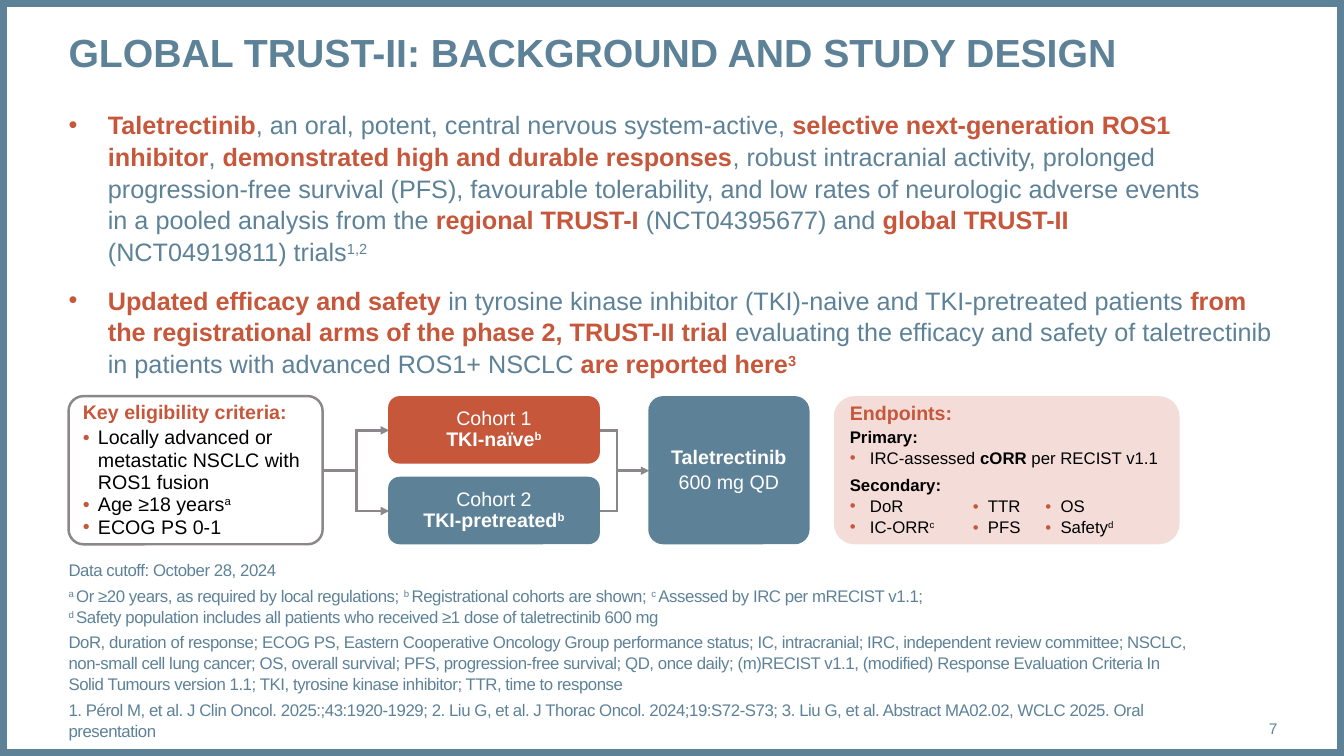
"""Build the TRUST-II background and study design slide."""
from copy import deepcopy

from lxml import etree
from pptx import Presentation
from pptx.dml.color import RGBColor
from pptx.enum import shapes, text
from pptx.oxml import ns
from pptx.util import Inches, Pt

SLATE = RGBColor(0x5D, 0x82, 0x98)
RUST = RGBColor(0xC6, 0x57, 0x3B)
BLUSH = RGBColor(0xF4, 0xDD, 0xD8)
GREY = RGBColor(0x8B, 0x87, 0x8B)
WHITE = RGBColor(0xFF, 0xFF, 0xFF)
BLACK = RGBColor(0, 0, 0)

LEFT = 0.68
DIAGRAM_TOP, DIAGRAM_HEIGHT = 3.93, 1.47
COHORT_HEIGHT, COHORT_STEP = 0.67, 0.8
UPPER, MIDDLE, LOWER = 4.27, 4.67, 5.07
SPLIT, MERGE = 3.54, 6.12

BACKGROUND = [
    [("Taletrectinib", "key"), (", an oral, potent, central nervous system-active, ", ""),
     ("selective next-generation ROS1 inhibitor", "key"), (", ", ""),
     ("demonstrated high and durable responses", "key"),
     (", robust intracranial activity, prolonged progression-free survival (PFS), favourable "
      "tolerability, and low rates of neurologic adverse events \nin a pooled analysis from the ", ""),
     ("regional TRUST-I ", "key"), ("(NCT04395677) and ", ""), ("global TRUST-II \n", "key"),
     ("(NCT04919811) trials", ""), ("1,2", "super")],
    [("Updated efficacy and safety ", "key"),
     ("in tyrosine kinase inhibitor (TKI)-naive and TKI-pretreated patients ", ""),
     ("from the registrational arms of the phase 2, TRUST-II trial ", "key"),
     ("evaluating the efficacy and safety of taletrectinib in patients with advanced ROS1+ NSCLC ", ""),
     ("are reported here", "key"), ("3", "key super")],
]
FOOTNOTES = [
    [("Data cutoff: October 28, 2024", "")],
    [("a ", "super"), ("Or ≥20 years, as required by local regulations; ", ""),
     ("b ", "super"), ("Registrational cohorts are shown; ", ""),
     ("c ", "super"), ("Assessed by IRC per mRECIST v1.1; \n", ""),
     ("d ", "super"),
     ("Safety population includes all patients who received ≥1 dose of taletrectinib 600 mg", "")],
    [("DoR, duration of response; ECOG PS, Eastern Cooperative Oncology Group performance status; "
      "IC, intracranial; IRC, independent review committee; NSCLC, non-small cell lung cancer; "
      "OS, overall survival; PFS, progression-free survival; QD, once daily; (m)RECIST v1.1, "
      "(modified) Response Evaluation Criteria In Solid Tumours version 1.1; TKI, tyrosine kinase "
      "inhibitor; TTR, time to response", "")],
    [("1. Pérol M, et al. J Clin Oncol. 2025:;43:1920-1929; 2. Liu G, et al. J Thorac Oncol. "
      "2024;19:S72-S73; 3. Liu G, et al. Abstract MA02.02, WCLC 2025. Oral presentation", "")],
]
CRITERIA = [
    [("Locally advanced or metastatic NSCLC with ROS1 fusion", "")],
    [("Age ≥18 years", ""), ("a", "super")],
    [("ECOG PS 0-1", "")],
]
SECONDARY = [
    [("DoR\t", ""), ("•", "rust"), ("\tTTR\t", ""), ("•", "rust"), ("\tOS", "")],
    [("IC-ORR", ""), ("c", "super"), ("\t", ""), ("•", "rust"), ("\tPFS\t", ""),
     ("•", "rust"), ("\tSafety", ""), ("d", "super")],
]
ENDPOINT_TABS = (1.22, 1.37, 1.94, 2.09)


def write(para, spans, size, color, spacing=None):
    """Fill a paragraph with (text, style words) spans."""
    for content, style in spans:
        words = style.split()
        for index, line in enumerate(content.split("\n")):
            if index:
                para.add_line_break()
                para._p[-1].append(deepcopy(span._r.rPr))
            if not line:
                continue
            span = para.add_run()
            span.text = line
            span.font.name, span.font.size = "Arial", Pt(size)
            span.font.bold = "key" in words or "bold" in words
            span.font.color.rgb = RUST if "key" in words or "rust" in words else color
            if "super" in words:
                span._r.get_or_add_rPr().set("baseline", "30000")
            if spacing:
                span._r.get_or_add_rPr().set("spc", str(spacing))


def add_para(frame, spans, size, color, line=1.0, before=0, after=0, indent=None,
             tabs=(), align=None, spacing=None):
    """Add one paragraph, reusing the empty first one of the frame."""
    fresh = not frame.paragraphs[0].runs
    para = frame.paragraphs[0] if fresh else frame.add_paragraph()
    if indent:
        add_bullet(para, indent, tabs)
    para.alignment = align or text.PP_ALIGN.LEFT
    para.line_spacing = line
    para.space_before, para.space_after = Pt(0 if fresh else before), Pt(after)
    write(para, spans, size, color, spacing)


def add_bullet(para, indent, tabs):
    """Give a paragraph a rust bullet, a hanging indent and tab stops."""
    props = para._p.get_or_add_pPr()
    props.set("marL", str(Inches(indent)))
    props.set("indent", str(-Inches(indent)))
    paint = etree.SubElement(props, ns.qn("a:buClr"))
    etree.SubElement(paint, ns.qn("a:srgbClr"), val=str(RUST))
    etree.SubElement(props, ns.qn("a:buFont"), typeface="Arial")
    etree.SubElement(props, ns.qn("a:buChar"), char="•")
    if tabs:
        stops = etree.SubElement(props, ns.qn("a:tabLst"))
        for stop in tabs:
            etree.SubElement(stops, ns.qn("a:tab"), pos=str(Inches(stop)), algn="l")


def prepare(box, place, anchor=text.MSO_ANCHOR.TOP):
    """Place a text holder without insets and return its frame."""
    box.left, box.top, box.width, box.height = map(Inches, place)
    frame = box.text_frame
    frame.word_wrap = True
    frame.auto_size = text.MSO_AUTO_SIZE.NONE
    frame.vertical_anchor = anchor
    frame.margin_left = frame.margin_right = frame.margin_top = frame.margin_bottom = 0
    return frame


def add_text_box(page, place, anchor):
    """Add a text box and return its frame."""
    return prepare(page.shapes.add_textbox(*map(Inches, place)), place, anchor)


def add_panel(page, place, fill=None, outline=None, width=1.75, radius=None):
    """Add a rectangle, rounded if a radius is given, and return its frame."""
    kind = shapes.MSO_SHAPE.ROUNDED_RECTANGLE if radius else shapes.MSO_SHAPE.RECTANGLE
    panel = page.shapes.add_shape(kind, *map(Inches, place))
    panel.shadow.inherit = False
    if radius:
        panel.adjustments[0] = radius
    if fill is None:
        panel.fill.background()
    else:
        panel.fill.solid()
        panel.fill.fore_color.rgb = fill
    if outline is None:
        panel.line.fill.background()
    else:
        panel.line.color.rgb, panel.line.width = outline, Pt(width)
    panel.text_frame.word_wrap = True
    panel.text_frame.vertical_anchor = text.MSO_ANCHOR.MIDDLE
    return panel.text_frame


def add_line(page, start, end, arrow=False):
    """Draw a straight grey connector, with an arrowhead on request."""
    link = page.shapes.add_connector(shapes.MSO_CONNECTOR.STRAIGHT, *map(Inches, start + end))
    link.line.color.rgb, link.line.width = GREY, Pt(2)
    if arrow:
        etree.SubElement(link.line._get_or_add_ln(), ns.qn("a:tailEnd"), type="triangle")
    etree.SubElement(link._element.spPr, ns.qn("a:effectLst"))


def add_flow(page):
    """Draw the lines from criteria to cohorts and on to treatment."""
    add_line(page, (3.2, MIDDLE), (SPLIT, MIDDLE))
    for height in (UPPER, LOWER):
        add_line(page, (SPLIT, height), (3.86, height), arrow=True)
        add_line(page, (5.95, height), (MERGE, height))
    for across in (SPLIT, MERGE):
        add_line(page, (across, UPPER - 0.01), (across, LOWER + 0.01))
    add_line(page, (MERGE, MIDDLE), (6.44, MIDDLE), arrow=True)


def add_design(page):
    """Draw the boxes of the study design."""
    center = text.PP_ALIGN.CENTER
    criteria = add_panel(page, (LEFT, DIAGRAM_TOP, 2.52, DIAGRAM_HEIGHT), WHITE, GREY, radius=0.1)
    add_para(criteria, [("Key eligibility criteria:", "key")], 14, BLACK, 0.95, after=2)
    for spans in CRITERIA:
        add_para(criteria, spans, 14, BLACK, 0.95, indent=0.15)

    cohorts = [("Cohort 1", "TKI-naïve", RUST), ("Cohort 2", "TKI-pretreated", SLATE)]
    for index, (cohort, patients, fill) in enumerate(cohorts):
        top = DIAGRAM_TOP + index * COHORT_STEP
        frame = add_panel(page, (3.85, top, 2.1, COHORT_HEIGHT), fill, radius=0.17)
        add_para(frame, [(cohort + "\n", ""), (patients, "bold"), ("b", "bold super")],
                 14, WHITE, 0.9, align=center)

    treatment = add_panel(page, (6.43, DIAGRAM_TOP, 1.6, DIAGRAM_HEIGHT), SLATE, radius=0.1)
    for spans in ([("Taletrectinib", "bold")], [("600 mg QD", "")]):
        add_para(treatment, spans, 14, WHITE, 0.95, after=2, align=center)

    ends = add_panel(page, (8.27, DIAGRAM_TOP, 3.43, DIAGRAM_HEIGHT), BLUSH, radius=0.14)
    add_para(ends, [("Endpoints:", "key")], 14, BLACK, 0.9, after=3)
    add_para(ends, [("Primary:", "bold")], 12, BLACK, 0.9, after=2)
    add_para(ends, [("IRC-assessed ", ""), ("cORR", "bold"), (" per RECIST v1.1", "")],
             12, BLACK, 0.9, after=3, indent=0.2)
    add_para(ends, [("Secondary:", "bold")], 12, BLACK, 0.9, before=3, after=2)
    for spans in SECONDARY:
        add_para(ends, spans, 12, BLACK, 0.9, after=2, indent=0.2, tabs=ENDPOINT_TABS)


def main():
    """Assemble and save the slide."""
    deck = Presentation()
    deck.slide_width, deck.slide_height = Inches(13.33), Inches(7.5)
    page = deck.slides.add_slide(deck.slide_layouts[1])
    add_panel(page, (0, 0, 13.33, 7.5), outline=SLATE, width=10)

    title = prepare(page.shapes.title, (LEFT, 0.28, 11.99, 0.94))
    add_para(title, [("GLOBAL TRUST-II: BACKGROUND AND STUDY DESIGN", "bold")], 28, SLATE)
    body = prepare(page.placeholders[1], (LEFT, 1.07, 11.99, 2.7))
    for spans in BACKGROUND:
        add_para(body, spans, 18, SLATE, 1.05, before=12, indent=0.39)

    add_flow(page)
    add_design(page)

    notes = add_text_box(page, (LEFT, 5.6, 11.13, 1.75), text.MSO_ANCHOR.BOTTOM)
    for spans in FOOTNOTES:
        add_para(notes, spans, 12, SLATE, 1.05, before=3, spacing=-30)
    number = add_text_box(page, (11.81, 7.03, 0.86, 0.4), text.MSO_ANCHOR.MIDDLE)
    add_para(number, [("7", "")], 11, SLATE, align=text.PP_ALIGN.RIGHT)
    deck.save("out.pptx")


if __name__ == "__main__":
    main()
